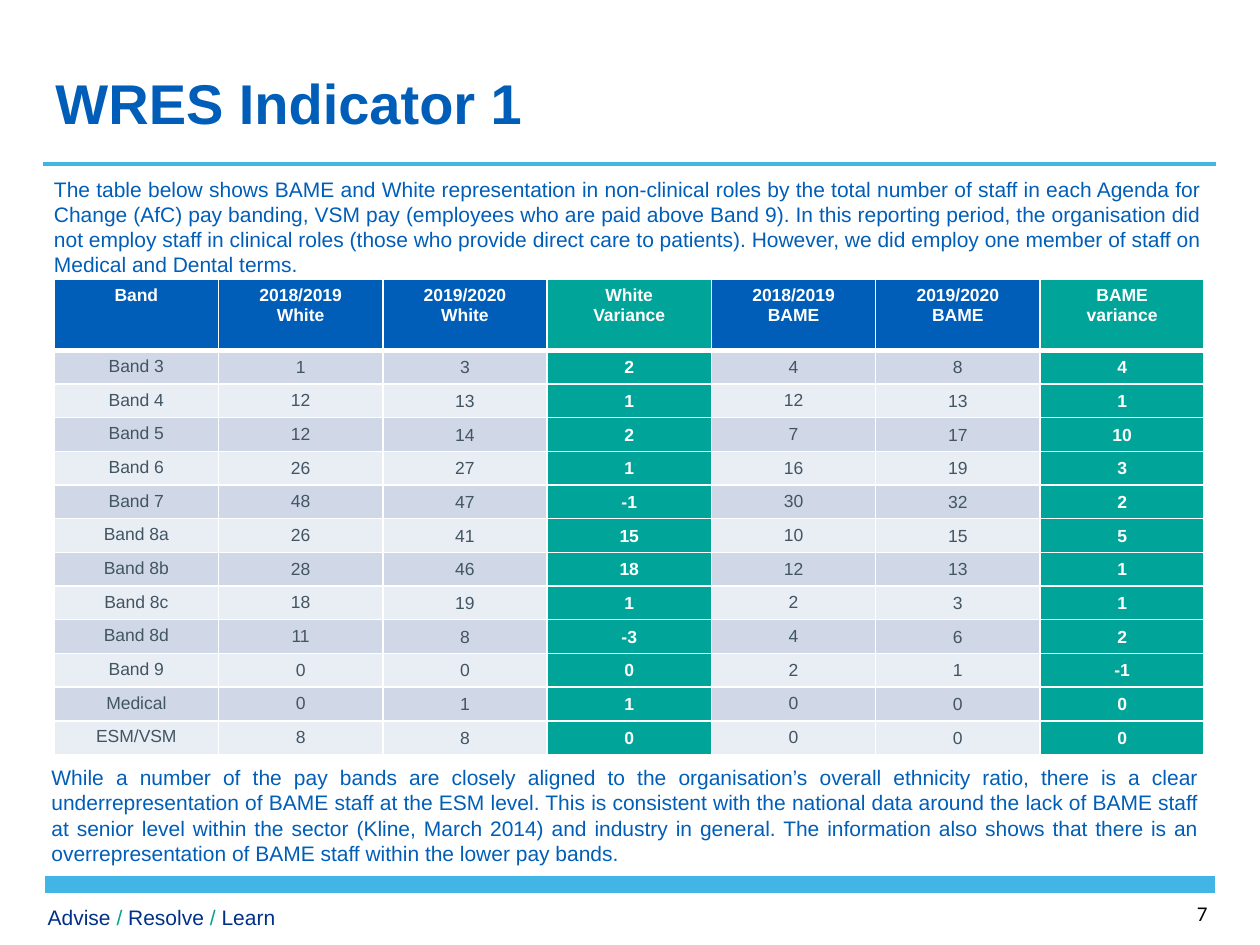
from lxml.etree import SubElement
from pptx import Presentation
from pptx.dml.color import RGBColor
from pptx.enum.shapes import MSO_CONNECTOR
from pptx.enum.text import MSO_ANCHOR as Anchor, MSO_AUTO_SIZE as AutoSize, PP_ALIGN as Align
from pptx.oxml.ns import qn
from pptx.util import Inches, Pt

BLUE = RGBColor(0x00, 0x5E, 0xB8)
NAVY = RGBColor(0x00, 0x30, 0x87)
SKY = RGBColor(0x41, 0xB6, 0xE6)
TEAL = RGBColor(0x00, 0xA4, 0x99)
SLASH_TEAL = RGBColor(0x00, 0xA2, 0x91)
SLATE = RGBColor(0x42, 0x55, 0x63)
STRIPES = (RGBColor(0xD0, 0xD8, 0xE8), RGBColor(0xE9, 0xED, 0xF4))
WHITE = RGBColor(0xFF, 0xFF, 0xFF)
BLACK = RGBColor(0x00, 0x00, 0x00)

INTRO = (
    "The table below shows BAME and White representation in non-clinical roles by the total "
    "number of staff in each Agenda for Change (AfC) pay banding, VSM pay (employees who are "
    "paid above Band 9). In this reporting period, the organisation did not employ staff in "
    "clinical roles (those who provide direct care to patients). However, we did employ one "
    "member of staff on Medical and Dental terms."
)
SUMMARY = (
    "While a number of the pay bands are closely aligned to the organisation’s overall "
    "ethnicity ratio, there is a clear underrepresentation of BAME staff at the ESM level. "
    "This is consistent with the national data around the lack of BAME staff at senior level "
    "within the sector (Kline, March 2014) and industry in general. The information also shows "
    "that there is an overrepresentation of BAME staff within the lower pay bands."
)
HEADERS = ["Band", "2018/2019\nWhite", "2019/2020\nWhite", "White\nVariance",
           "2018/2019\nBAME", "2019/2020\nBAME", "BAME\nvariance"]
VARIANCE_COLS = (3, 6)
LATEST_COLS = (2, 5)
# Band, White 2018/2019 and 2019/2020, BAME 2018/2019 and 2019/2020
STAFF = [
    ("Band 3", 1, 3, 4, 8),
    ("Band 4", 12, 13, 12, 13),
    ("Band 5", 12, 14, 7, 17),
    ("Band 6", 26, 27, 16, 19),
    ("Band 7", 48, 47, 30, 32),
    ("Band 8a", 26, 41, 10, 15),
    ("Band 8b", 28, 46, 12, 13),
    ("Band 8c", 18, 19, 2, 3),
    ("Band 8d", 11, 8, 4, 6),
    ("Band 9", 0, 0, 2, 1),
    ("Medical", 0, 1, 0, 0),
    ("ESM/VSM", 8, 8, 0, 0),
]


def write(tf, text, *, size=12, color=BLUE, bold=False, font="Arial", align=Align.LEFT):
    """Fill a text frame; text is a string, or a list of (string, colour) runs on one line."""
    lines = [[(line, color)] for line in text.split("\n")] if isinstance(text, str) else [text]
    for i, runs in enumerate(lines):
        p = tf.add_paragraph() if i else tf.paragraphs[0]
        p.alignment = align
        for run_text, run_color in runs:
            r = p.add_run()
            r.text = run_text
            r.font.name = font
            r.font.size = Pt(size)
            r.font.bold = bold
            r.font.color.rgb = run_color


def add_text(slide, x, y, w, h, text, grow=True, **fmt):
    tf = slide.shapes.add_textbox(Inches(x), Inches(y), Inches(w), Inches(h)).text_frame
    tf.word_wrap = True
    tf.auto_size = AutoSize.SHAPE_TO_FIT_TEXT if grow else AutoSize.NONE
    write(tf, text, **fmt)


def add_rule(slide, x1, x2, y, width):
    line = slide.shapes.add_connector(
        MSO_CONNECTOR.STRAIGHT, Inches(x1), Inches(y), Inches(x2), Inches(y))
    line.line.color.rgb = SKY
    line.line.width = Pt(width)
    SubElement(line._element.spPr, qn("a:effectLst"))


def set_title(slide, text):
    title = slide.shapes.title
    title.left, title.top = Inches(0.34), Inches(0.44)
    title.width, title.height = Inches(7.57), Inches(0.74)
    title.text_frame.vertical_anchor = Anchor.MIDDLE
    write(title.text_frame, text, size=32, bold=True)


def set_borders(cell, bottom):
    tc_pr = cell._tc.get_or_add_tcPr()
    for side, width in (("L", 1), ("R", 1), ("T", 1), ("B", bottom)):
        ln = SubElement(tc_pr, qn(f"a:ln{side}"), w=str(Pt(width)))
        SubElement(SubElement(ln, qn("a:solidFill")), qn("a:srgbClr"), val=str(WHITE))


def format_cell(cell, text, fill, color, bold, bottom=1):
    set_borders(cell, bottom)
    cell.fill.solid()
    cell.fill.fore_color.rgb = fill
    write(cell.text_frame, text, size=10, color=color, bold=bold, align=Align.CENTER)


def add_staff_table(slide):
    header_h, row_h = Inches(0.56), Inches(0.25)
    table = slide.shapes.add_table(
        len(STAFF) + 1, len(HEADERS), Inches(0.43), Inches(2.22),
        Inches(9.13), header_h + row_h * len(STAFF)).table
    for row in table.rows:
        row.height = row_h
    table.rows[0].height = header_h

    for c, text in enumerate(HEADERS):
        fill = TEAL if c in VARIANCE_COLS else BLUE
        format_cell(table.cell(0, c), text, fill, WHITE, True, bottom=3)

    for r, (band, white_1, white_2, bame_1, bame_2) in enumerate(STAFF, 1):
        values = (band, white_1, white_2, white_2 - white_1, bame_1, bame_2, bame_2 - bame_1)
        for c, value in enumerate(values):
            cell = table.cell(r, c)
            is_variance = c in VARIANCE_COLS
            fill = TEAL if is_variance else STRIPES[(r - 1) % 2]
            format_cell(cell, str(value), fill, WHITE if is_variance else SLATE, is_variance)
            if c:
                cell.vertical_anchor = Anchor.MIDDLE
            if is_variance or c in LATEST_COLS:
                cell.margin_left = cell.margin_right = cell.margin_top = Inches(0.01)
                cell.margin_bottom = 0


def add_footer(slide):
    motto = [("Advise ", NAVY), ("/", SLASH_TEAL), (" Resolve ", NAVY),
             ("/", SLASH_TEAL), (" Learn", NAVY)]
    add_text(slide, 0.28, 7.13, 2.48, 0.3, motto)
    add_rule(slide, 0.36, 9.64, 7.02, 10)
    add_text(slide, 9.4, 7.1, 0.55, 0.4, "7", grow=False, font="Calibri", color=BLACK)


def main():
    prs = Presentation()
    prs.slide_width, prs.slide_height = Inches(10), Inches(7.5)
    slide = prs.slides.add_slide(prs.slide_layouts[5])
    add_rule(slide, 0.34, 9.65, 1.3, 2)
    add_footer(slide)
    set_title(slide, "WRES Indicator 1")
    add_staff_table(slide)
    add_text(slide, 0.33, 1.35, 9.31, 0.91, INTRO, align=Align.JUSTIFY)
    add_text(slide, 0.31, 6.02, 9.31, 0.91, SUMMARY, align=Align.JUSTIFY)
    prs.save("out.pptx")


if __name__ == "__main__":
    main()
